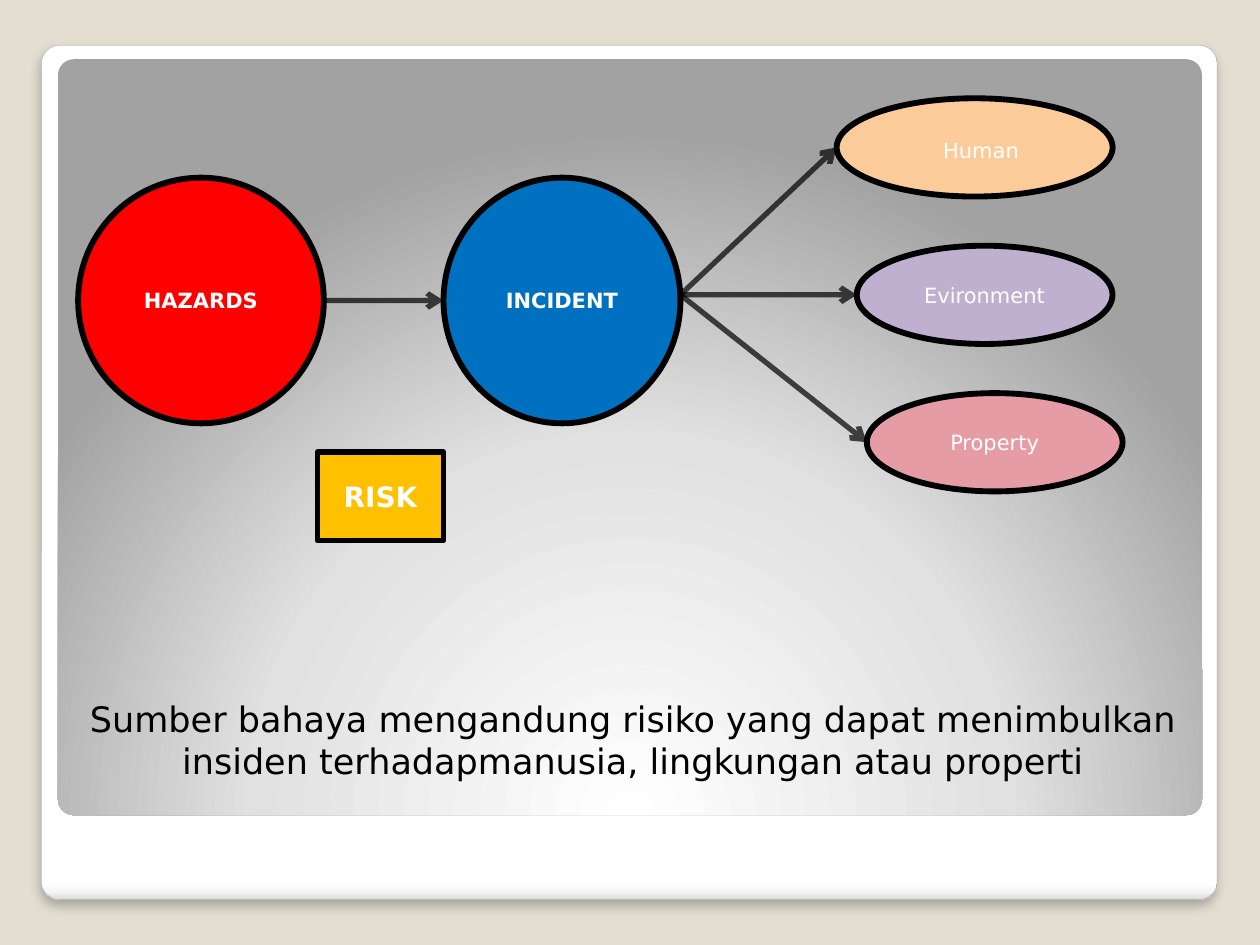
from dataclasses import dataclass

from lxml.etree import SubElement
from pptx import Presentation
from pptx.dml.color import RGBColor
from pptx.enum.shapes import MSO_CONNECTOR, MSO_SHAPE
from pptx.enum.text import MSO_ANCHOR, PP_ALIGN
from pptx.oxml.ns import qn
from pptx.util import Inches, Pt

FONT = "DejaVu Sans"
COLORS = {
    "background": "E3DED1",
    "frame_line": "A4A4A4",
    "black": "000000",
    "white": "FFFFFF",
    "hazard": "FF0000",
    "incident": "0070C0",
    "environment": "BFB0CF",
    "human": "FBCC9A",
    "property": "E69CA4",
    "risk": "FFC000",
}
FRAME_STOPS = [(0, "FFFFFF"), (98, "FFFFFF"), (99, "F7F7F7"), (100, "DADADA")]
PANEL_STOPS = [(0, "FFFFFF"), (55, "E1E1E1"), (100, "A2A2A2")]


@dataclass
class Node:
    label: str
    left: float
    top: float
    width: float
    height: float
    color: str
    size: int = 12
    bold: bool = False
    kind: MSO_SHAPE = MSO_SHAPE.OVAL

    @property
    def middle(self) -> float:
        return self.top + self.height / 2

    @property
    def right(self) -> float:
        return self.left + self.width


HAZARDS = Node("HAZARDS", 0.62, 1.41, 1.95, 1.95, "hazard", bold=True)
INCIDENT = Node("INCIDENT", 3.52, 1.41, 1.88, 1.95, "incident", bold=True)
ENVIRONMENT = Node("Evironment", 6.8, 1.95, 2.03, 0.78, "environment")
HUMAN = Node("Human", 6.64, 0.78, 2.19, 0.78, "human")
PROPERTY = Node("Property", 6.88, 3.12, 2.03, 0.78, "property")
RISK = Node("RISK", 2.52, 3.59, 1, 0.7, "risk", 16, True, MSO_SHAPE.RECTANGLE)
EFFECTS = [ENVIRONMENT, PROPERTY, HUMAN]


def rgb(name: str) -> RGBColor:
    return RGBColor.from_string(COLORS[name])


def write_text(shape, text: str, size: int, color: str, bold: bool = False):
    frame = shape.text_frame
    frame.word_wrap = True
    frame.vertical_anchor = MSO_ANCHOR.MIDDLE
    frame.text = text
    para = frame.paragraphs[0]
    para.alignment = PP_ALIGN.CENTER
    font = para.runs[0].font
    font.name, font.size, font.bold = FONT, Pt(size), bold
    font.color.rgb = rgb(color)
    return frame


def add_card(slide, left: float, top: float, width: float, height: float, stops: list):
    card = slide.shapes.add_shape(
        MSO_SHAPE.ROUNDED_RECTANGLE, Inches(left), Inches(top), Inches(width), Inches(height)
    )
    card.adjustments[0] = 0.021
    card.shadow.inherit = False
    card.line.fill.background()
    card.fill.gradient()
    gradient = card.element.spPr.find(qn("a:gradFill"))
    for child in list(gradient):
        gradient.remove(child)
    stop_list = SubElement(gradient, qn("a:gsLst"))
    for position, color in stops:
        stop = SubElement(stop_list, qn("a:gs"), pos=str(position * 1000))
        SubElement(stop, qn("a:srgbClr"), val=color)
    return card, gradient


def add_frame(slide) -> None:
    frame, gradient = add_card(slide, 0.33, 0.36, 9.33, 6.78, FRAME_STOPS)
    SubElement(gradient, qn("a:lin"), ang="5400000", scaled="0")
    frame.line.color.rgb = rgb("frame_line")
    frame.line.width = Pt(0.16)
    effects = frame.element.spPr.find(qn("a:effectLst"))
    shadow = SubElement(
        effects, qn("a:outerShdw"), blurRad=str(Pt(6)), dist=str(Pt(4)), dir="5400000", rotWithShape="0"
    )
    tint = SubElement(shadow, qn("a:srgbClr"), val=COLORS["black"])
    SubElement(tint, qn("a:alpha"), val="25000")


def add_panel(slide) -> None:
    _, gradient = add_card(slide, 0.46, 0.47, 9.08, 6, PANEL_STOPS)
    circle = SubElement(gradient, qn("a:path"), path="circle")
    SubElement(circle, qn("a:fillToRect"), l="50000", t="175000", r="50000", b="-75000")


def add_node(slide, node: Node):
    shape = slide.shapes.add_shape(
        node.kind, Inches(node.left), Inches(node.top), Inches(node.width), Inches(node.height)
    )
    shape.shadow.inherit = False
    shape.fill.solid()
    shape.fill.fore_color.rgb = rgb(node.color)
    shape.line.color.rgb = rgb("black")
    shape.line.width = Pt(3.35)
    return write_text(shape, node.label, node.size, "white", node.bold)


def add_arrow(slide, source: Node, start: float, target: Node) -> None:
    arrow = slide.shapes.add_connector(
        MSO_CONNECTOR.STRAIGHT,
        Inches(source.right), Inches(start), Inches(target.left), Inches(target.middle),
    )
    arrow.line.color.rgb = rgb("black")
    arrow.line.width = Pt(3)
    properties = arrow.element.spPr
    line = properties.find(qn("a:ln"))
    SubElement(line.find(".//" + qn("a:srgbClr")), qn("a:alpha"), val="71000")
    SubElement(line, qn("a:tailEnd"), type="arrow")
    SubElement(properties, qn("a:effectLst"))


def main() -> None:
    deck = Presentation()
    deck.slide_width, deck.slide_height = Inches(10), Inches(7.5)
    slide = deck.slides.add_slide(deck.slide_layouts[6])
    slide.background.fill.solid()
    slide.background.fill.fore_color.rgb = rgb("background")
    add_frame(slide)
    add_panel(slide)

    caption = slide.shapes.add_textbox(Inches(0.55), Inches(5.45), Inches(8.95), Inches(0.8))
    caption_frame = write_text(
        caption,
        "Sumber bahaya mengandung risiko yang dapat menimbulkan "
        "insiden terhadapmanusia, lingkungan atau properti",
        20,
        "black",
    )
    caption_frame.vertical_anchor = MSO_ANCHOR.BOTTOM

    for node in (HAZARDS, INCIDENT, ENVIRONMENT, PROPERTY, RISK):
        add_node(slide, node)
    human_frame = add_node(slide, HUMAN)
    human_frame.margin_left, human_frame.margin_top = Inches(0.2), Inches(0.1)
    human_frame.paragraphs[0].space_before = Pt(2.5)

    add_arrow(slide, HAZARDS, HAZARDS.middle, INCIDENT)
    for effect in EFFECTS:
        add_arrow(slide, INCIDENT, ENVIRONMENT.middle, effect)
    deck.save("out.pptx")


if __name__ == "__main__":
    main()
